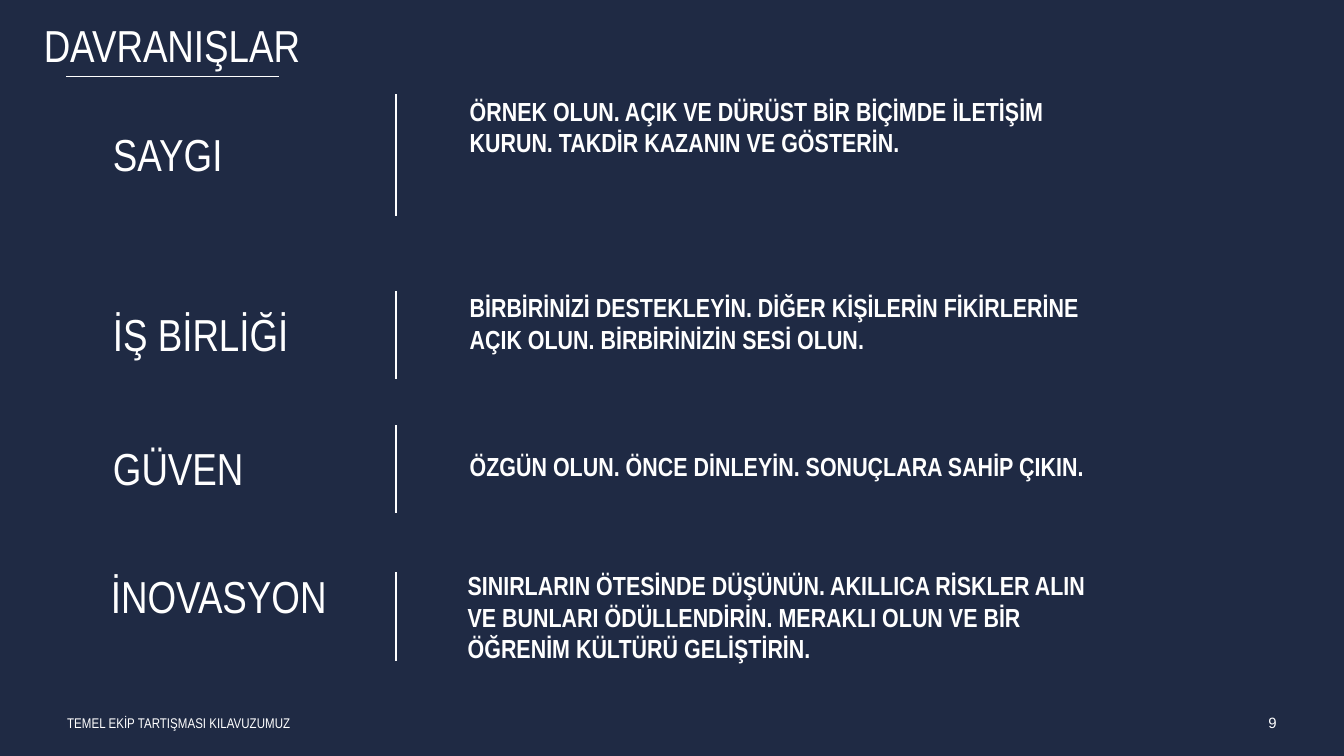
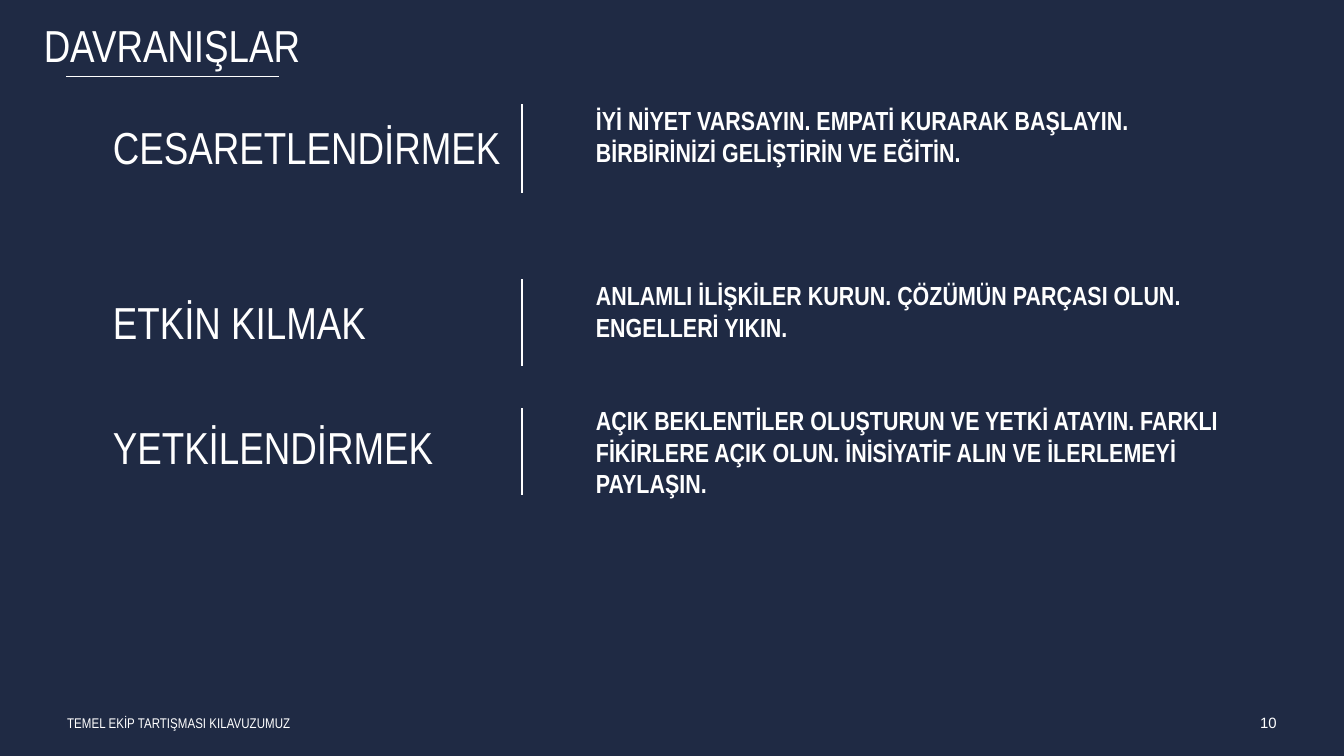
from collections import namedtuple
from dataclasses import dataclass

from lxml.etree import SubElement
from pptx import Presentation
from pptx.dml.color import RGBColor
from pptx.enum.lang import MSO_LANGUAGE_ID
from pptx.enum.shapes import MSO_CONNECTOR
from pptx.enum.text import MSO_ANCHOR, MSO_AUTO_SIZE, PP_ALIGN
from pptx.oxml.ns import qn
from pptx.util import Inches, Pt


@dataclass(frozen=True)
class Theme:
    """Colours, fonts and type sizes of the deck."""
    back: RGBColor = RGBColor(0x1F, 0x2A, 0x44)
    ink: RGBColor = RGBColor(0xFF, 0xFF, 0xFF)
    face: str = "Arial Narrow"
    plain: str = "Arial"
    head: float = 24
    body: float = 14
    foot: float = 7.5
    page: float = 8
    rule: float = 1


THEME = Theme()
WIDE = 10
HIGH = WIDE * 9 / 16
COLS, ROWS = 100, 56.25
LEFT = 8.4
GAP = 5.48

Row = namedtuple("Row", "name text tag note rule shift", defaults=[0])

VALUES = [
    Row("Saygı",
        "Örnek olun. Açık ve dürüst bir biçimde iletişim kurun. "
        "Takdir kazanın ve gösterin.",
        (7.1, 21.9, 9.2), (7.1, 46.7, 11.2), (7.1, 8.9)),
    Row("İş BİRLİĞİ",
        "Birbirinizi destekleyin. Diğer kişilerin fikirlerine açık olun. "
        "Birbirinizin sesi olun.",
        (21.7, 21.9, 6.7), (21.7, 46.4, 7.9), (21.7, 6.4)),
    Row("Güven",
        "Özgün olun. Önce dinleyin. Sonuçlara sahip çıkın.",
        (31.7, 21.9, 6.7), (33.5, 45.9, 2.8), (31.7, 6.4)),
    Row("inovasyon",
        "Sınırların ötesinde düşünün. Akıllıca riskler alın ve bunları "
        "ödüllendirin. Meraklı olun ve bir öğrenim kültürü geliştirin.",
        (40, 21.9, 9.2), (42.4, 46.7, 11.2), (42.6, 6.5), -0.15),
]
ACTIONS = [
    Row("Cesaretlendirmek",
        "İyi niyet varsayın. Empati kurarak başlayın. "
        "Birbirinizi geliştirin ve eğitin.",
        (7.8, 43.5, 6.7), (7.8, 44.9, 7.9), (7.8, 6.5)),
    Row("Etkin kılmak",
        "Anlamlı ilişkiler kurun. Çözümün parçası olun. Engelleri yıkın.",
        (20.8, 21.9, 6.7), (20.8, 45.9, 6.7), (20.8, 6.4)),
    Row("YETKİLENDİRMEK",
        "Açık beklentiler oluşturun ve yetki atayın. Farklı fikirlere "
        "açık olun. İnisiyatif alın ve ilerlemeyi paylaşın.",
        (30.1, 31.9, 6.7), (30.1, 50.7, 6.7), (30.4, 6.4)),
]
PAGES = [(9, VALUES, 29.46), (10, ACTIONS, 38.86)]


def apply(item, vals):
    """Set each value of a dict on an object."""
    for key, val in vals.items():
        setattr(item, key, val)


def grid(x, y, w, h):
    """Turn grid columns and rows into slide lengths."""
    col, row = WIDE / COLS, HIGH / ROWS
    return [Inches(n) for n in (x * col, y * row, w * col, h * row)]


def write(shape, box, text, size, bold=False, face=THEME.face, top=0,
          wrap=True, anchor=MSO_ANCHOR.TOP, align=PP_ALIGN.LEFT, lead=1):
    """Move a text shape to its box and fill it with one Turkish all-caps line."""
    apply(shape, dict(zip(("left", "top", "width", "height"), grid(*box))))
    frame = shape.text_frame
    apply(frame, dict(text=text, word_wrap=wrap, vertical_anchor=anchor,
                      auto_size=MSO_AUTO_SIZE.NONE, margin_left=0,
                      margin_right=0, margin_top=Inches(top), margin_bottom=0))
    par = frame.paragraphs[0]
    props = par._p.get_or_add_pPr()
    props.set("marL", "0")
    props.set("indent", "0")
    SubElement(props, qn("a:buNone"))
    apply(par, dict(alignment=align, line_spacing=lead,
                    space_before=Pt(0), space_after=Pt(0)))
    run = par.runs[0]
    apply(run.font, dict(name=face, size=Pt(size), bold=bold,
                         language_id=MSO_LANGUAGE_ID.TURKISH))
    run.font.color.rgb = THEME.ink
    run._r.get_or_add_rPr().set("cap", "all")


def label(slide, box, text, size, **form):
    """Add a text box."""
    write(slide.shapes.add_textbox(*grid(*box)), box, text, size, **form)


def rule(slide, x, y, w=0, h=0):
    """Draw a thin straight line with square ends."""
    left, top, wide, high = grid(x, y, w, h)
    line = slide.shapes.add_connector(
        MSO_CONNECTOR.STRAIGHT, left, top, left + wide, top + high)
    line.line.color.rgb = THEME.ink
    line.line.width = Pt(THEME.rule)
    props = line._element.spPr
    props.find(qn("a:ln")).set("cap", "sq")
    SubElement(props, qn("a:effectLst"))


def frame(slide, page):
    """Write the title with its line, the footer and the page number."""
    write(slide.shapes.title, (0, 0, 25.6, 7.1), "Davranışlar", THEME.head,
          anchor=MSO_ANCHOR.MIDDLE, align=PP_ALIGN.CENTER, lead=0.9)
    rule(slide, 5, 5.7, w=15.7)
    label(slide, (5, 53, 43.5, 2), "Temel ekip tartışması kılavuzumuz",
          THEME.foot, top=0.02, wrap=False)
    label(slide, (90, 53, 5, 2), str(page), THEME.page, face=THEME.plain,
          top=0.01, wrap=False, align=PP_ALIGN.RIGHT)


def entry(slide, holder, row, split):
    """Add one behaviour: its name, a dividing line and its text."""
    y, w, h = row.tag
    label(slide, (LEFT + row.shift, y, w, h), row.name, THEME.head,
          anchor=MSO_ANCHOR.MIDDLE, lead=0.9)
    y, w, h = row.note
    write(holder, (split + GAP + row.shift, y, w, h), row.text, THEME.body,
          bold=True)
    y, h = row.rule
    rule(slide, split, y, h=h)


def main():
    """Build and save the deck."""
    deck = Presentation()
    apply(deck, dict(slide_width=Inches(WIDE), slide_height=Inches(HIGH)))
    fill = deck.slide_master.background.fill
    fill.solid()
    fill.fore_color.rgb = THEME.back
    plan = deck.slide_layouts.get_by_name("Comparison")
    for page, rows, split in PAGES:
        slide = deck.slides.add_slide(plan)
        frame(slide, page)
        slots = list(slide.placeholders)[1:]
        for slot, row in zip(slots, rows):
            entry(slide, slot, row, split)
        for slot in slots[len(rows):]:
            slot._element.getparent().remove(slot._element)
    deck.save("out.pptx")


if __name__ == "__main__":
    main()
